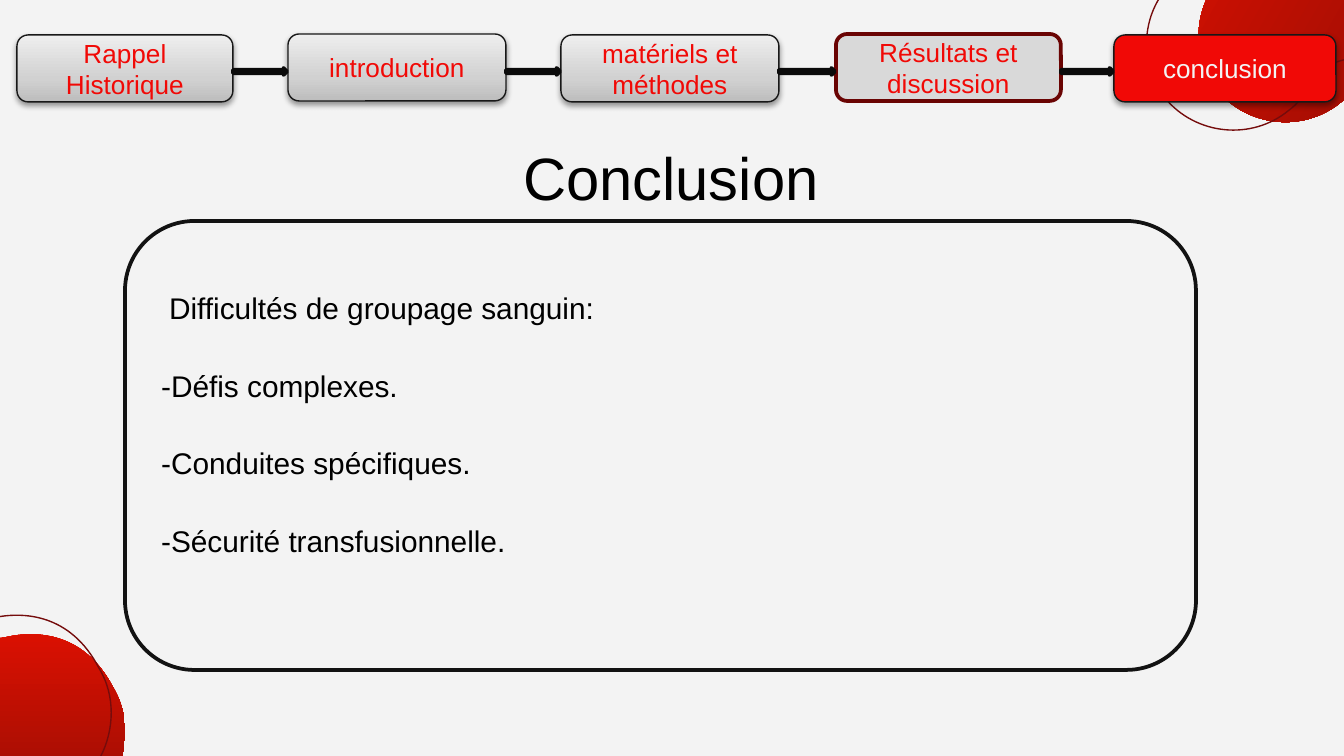
from itertools import pairwise

from lxml import etree
from pptx import Presentation
from pptx import util as u
from pptx.dml.color import RGBColor
from pptx.enum import shapes, text
from pptx.oxml.ns import qn

SCALE = 914400 / 134.4
COLORS = {
    "paper": "F3F3F3", "red": "F10906", "black": "000000", "ring": "750C0C",
    "edge": "181818", "gray": "D9D9D9", "maroon": "6A0403", "arrow": "191919",
    "arrow_edge": "0B0B0B", "frame": "121212",
}
RED_STOPS = [(0, "E91101"), (100, "630B05")]
GRAY_STOPS = [(0, "BDBDBD"), (35, "D1D1D1"), (100, "EEEEEE")]
BLOB = [
    (148, 30), (140, 23), (130, 17), (120, 15), (78, 0), (32, 23), (16, 63),
    (0, 106), (22, 155), (65, 171), (74, 175), (83, 176), (94, 176),
    (112, 176), (128, 184), (138, 199), (140, 200), (140, 200), (141, 202),
    (159, 223), (169, 250), (171, 278), (171, 290), (173, 301), (179, 310),
    (198, 343), (237, 355), (270, 340), (308, 324), (323, 280), (305, 243),
    (294, 224), (294, 202), (304, 181), (317, 155), (319, 121), (302, 93),
    (274, 39), (227, 36), (196, 43), (179, 47), (161, 42), (148, 30),
]
STEPS = [
    ("Rappel Historique", 17, 35, 216, "plain"),
    ("introduction", 288, 34, 218, "plain"),
    ("matériels et méthodes", 561, 35, 218, "plain"),
    ("Résultats et discussion", 836, 34, 225, "previous"),
    ("conclusion", 1114, 35, 222, "current"),
]
POINTS = [
    "Difficultés de groupage sanguin:",
    "-Défis complexes.",
    "-Conduites spécifiques.",
    "-Sécurité transfusionnelle.",
]


def px(length):
    """Turn pixels into EMU."""
    return u.Emu(round(length * SCALE))


def rgb(name):
    """Look up a named colour."""
    return RGBColor.from_string(COLORS[name])


def paint(shape, fill=None, line=None, width=0.75):
    """Give a shape a flat fill and an outline, without shadow."""
    shape.shadow.inherit = False
    if fill:
        shape.fill.solid()
        shape.fill.fore_color.rgb = rgb(fill)
    else:
        shape.fill.background()
    if line:
        shape.line.color.rgb = rgb(line)
        shape.line.width = u.Pt(width)
    else:
        shape.line.fill.background()


def add_color(parent, value):
    """Append an RGB colour element."""
    return etree.SubElement(parent, qn("a:srgbClr"), val=value)


def paint_gradient(shape, stops, angle):
    """Fill a shape with a linear gradient, angle counter-clockwise."""
    shape.fill.gradient()
    shape.fill.gradient_angle = angle
    stop_list = shape.element.spPr.find(".//" + qn("a:gsLst"))
    for stop in list(stop_list):
        stop_list.remove(stop)
    for position, value in stops:
        add_color(etree.SubElement(stop_list, qn("a:gs"), pos=str(position * 1000)), value)


def add_shadow(shape):
    """Cast a soft shadow below a shape."""
    effects = shape.element.spPr.find(qn("a:effectLst"))
    shadow = etree.SubElement(
        effects, qn("a:outerShdw"), blurRad=str(u.Pt(3.1)), dist=str(u.Pt(1.6)),
        dir="5400000", rotWithShape="0")
    etree.SubElement(add_color(shadow, COLORS["black"]), qn("a:alpha"), val="38000")


def add_span(para, words, size, color):
    """Append one run of text."""
    span = para.add_run()
    span.text = words
    span.font.name = "Arial"
    span.font.size = u.Pt(size)
    span.font.color.rgb = rgb(color)


def add_shape(page, kind, left, top, width, height):
    """Place a preset shape."""
    return page.shapes.add_shape(kind, px(left), px(top), px(width), px(height))


def add_textbox(page, left, top, width, height):
    """Place a wrapping text box and return its frame."""
    frame = page.shapes.add_textbox(px(left), px(top), px(width), px(height)).text_frame
    frame.word_wrap = True
    return frame


def add_blob(page, left, top, width, height, rotation, filled):
    """Draw the curved blob as a gradient surface or as a thin outline."""
    builder = page.shapes.build_freeform(*BLOB[0], scale=SCALE)
    builder.add_line_segments(BLOB[1:], close=True)
    blob = builder.convert_to_shape()
    lines = list(blob.element.spPr.iter(qn("a:lnTo")))
    for start in range(0, len(lines), 3):
        curve = etree.Element(qn("a:cubicBezTo"))
        lines[start].addprevious(curve)
        for line in lines[start:start + 3]:
            curve.append(line[0])
            line.getparent().remove(line)
    blob.left, blob.top, blob.width, blob.height = map(px, (left, top, width, height))
    blob.rotation = rotation
    paint(blob, line=None if filled else "ring")
    if filled:
        paint_gradient(blob, RED_STOPS, 270)


def add_step(page, label, left, top, width, state):
    """Draw one button of the progress bar."""
    step = add_shape(page, shapes.MSO_SHAPE.ROUNDED_RECTANGLE, left, top, width, 67)
    if state == "previous":
        paint(step, "gray", "maroon", 2)
    else:
        paint(step, "red", "edge")
        add_shadow(step)
    if state == "plain":
        paint_gradient(step, GRAY_STOPS, 90)
    frame = step.text_frame
    frame.word_wrap = True
    frame.vertical_anchor = text.MSO_ANCHOR.MIDDLE
    para = frame.paragraphs[0]
    para.alignment = text.PP_ALIGN.CENTER
    add_span(para, label, 14, "paper" if state == "current" else "red")


def add_progress(page):
    """Draw the buttons and the arrows that bridge their gaps."""
    for step in STEPS:
        add_step(page, *step)
    for before, after in pairwise(STEPS):
        start = before[1] + before[3]
        arrow = add_shape(page, shapes.MSO_SHAPE.RIGHT_ARROW, start, 68, after[1] - start - 1, 7)
        paint(arrow, "arrow", "arrow_edge", 2)


def add_title(page):
    """Write the centred title."""
    para = add_textbox(page, 134, 134, 1074, 86).paragraphs[0]
    para.alignment = text.PP_ALIGN.CENTER
    add_span(para, "Conclusion", 32, "black")


def add_points(page):
    """Draw the frame with the concluding points."""
    panel = add_shape(page, shapes.MSO_SHAPE.ROUNDED_RECTANGLE, 125, 221, 1071, 449)
    panel.adjustments[0] = 0.155
    paint(panel, line="frame", width=2)
    frame = add_textbox(page, 148, 281, 1046, 321)
    for index, words in enumerate(POINTS):
        para = frame.add_paragraph() if index else frame.paragraphs[0]
        para.line_spacing = 1.07
        if index:
            para.space_before = u.Pt(21)
        else:
            para._p.get_or_add_pPr().set("marL", str(px(8)))
        add_span(para, words, 16, "black")


def main():
    """Build the slide and save it."""
    deck = Presentation()
    deck.slide_width, deck.slide_height = px(1344), px(756)
    page = deck.slides.add_slide(deck.slide_layouts[6])
    page.background.fill.solid()
    page.background.fill.fore_color.rgb = rgb("paper")
    add_blob(page, 1228, -168, 339, 372, 300, True)
    add_blob(page, 1176, -160, 339, 372, 300, False)
    add_blob(page, -190, 594, 324, 355, 0, True)
    add_blob(page, -204, 575, 324, 355, 0, False)
    add_progress(page)
    add_title(page)
    add_points(page)
    deck.save("out.pptx")


if __name__ == "__main__":
    main()
